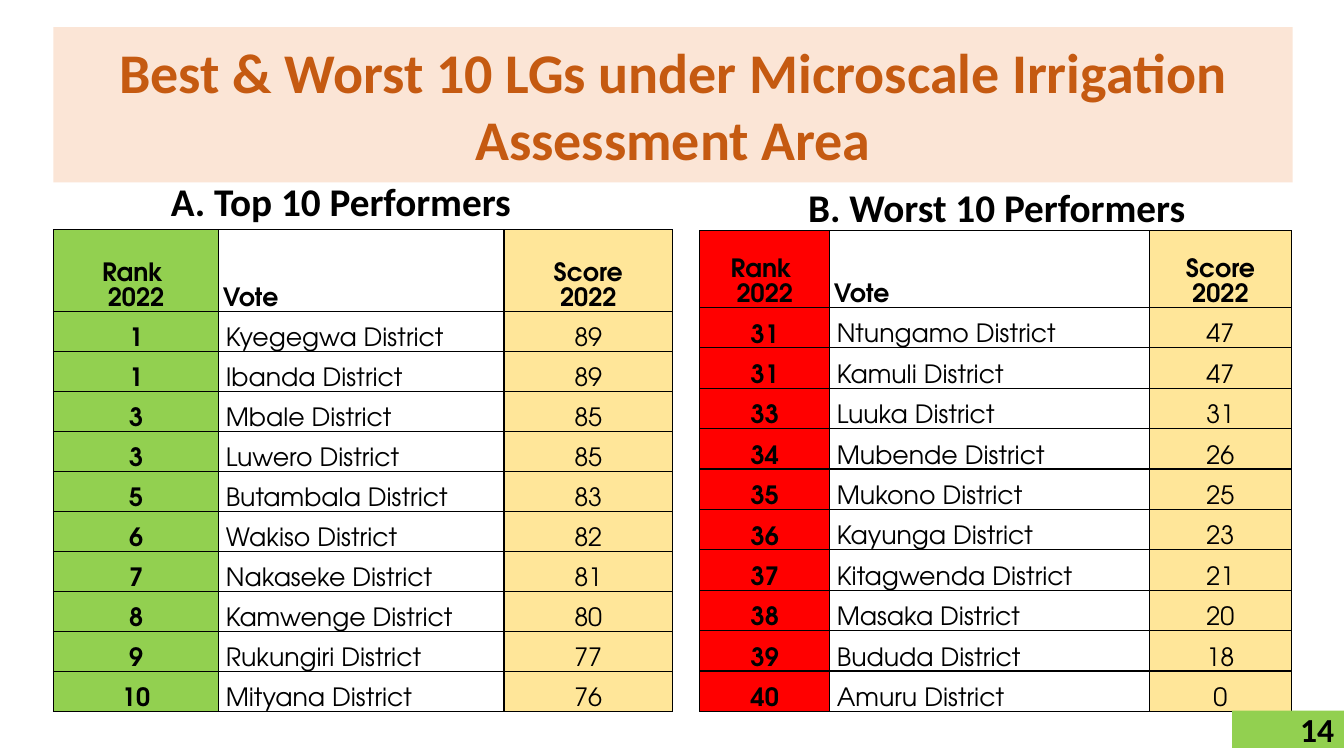
import pptx
import pptx.util
import pptx.oxml
import pptx.oxml.ns
import pptx.dml.color
import pptx.enum.text
import pptx.enum.shapes

PX = 9144  # 100 px to the inch
HUES = {
    "peach": "FBE5D6", "rust": "C55A11", "black": "000000", "white": "FFFFFF",
    "green": "92D050", "red": "FF0000", "gold": "FFE699",
}
ALIGN = pptx.enum.text.PP_ALIGN
ANCHOR = pptx.enum.text.MSO_ANCHOR

BEST = [
    (1, "Kyegegwa", 89), (1, "Ibanda", 89), (3, "Mbale", 85), (3, "Luwero", 85),
    (5, "Butambala", 83), (6, "Wakiso", 82), (7, "Nakaseke", 81),
    (8, "Kamwenge", 80), (9, "Rukungiri", 77), (10, "Mityana", 76),
]
WORST = [
    (31, "Ntungamo", 47), (31, "Kamuli", 47), (33, "Luuka", 31),
    (34, "Mubende", 26), (35, "Mukono", 25), (36, "Kayunga", 23),
    (37, "Kitagwenda", 21), (38, "Masaka", 20), (39, "Bududa", 18),
    (40, "Amuru", 0),
]


def px(num):
    return pptx.util.Emu(round(num * PX))


def hue(name):
    return pptx.dml.color.RGBColor.from_string(HUES[name])


def assign(item, values):
    for name, value in values.items():
        setattr(item, name, value)


def paint(item, name):
    item.fill.solid()
    item.fill.fore_color.rgb = hue(name)


def place(shape, box):
    assign(shape, dict(zip(("left", "top", "width", "height"), map(px, box))))


def write(frame, text, size, face="Calibri", color="black", bold=True, **para):
    frame.text = text
    for line in frame.paragraphs:
        assign(line, para)
        for run in line.runs:
            assign(run.font, {"size": pptx.util.Pt(size), "name": face, "bold": bold})
            run.font.color.rgb = hue(color)


def set_frame(frame, anchor):
    assign(frame, {"auto_size": pptx.enum.text.MSO_AUTO_SIZE.NONE,
                   "word_wrap": True, "vertical_anchor": anchor})


def border(cell):
    props = cell._tc.get_or_add_tcPr()
    for spot, side in enumerate(("lnL", "lnR", "lnT", "lnB")):
        props.insert(spot, pptx.oxml.parse_xml(
            f'<a:{side} {pptx.oxml.ns.nsdecls("a")} w="12700"><a:solidFill>'
            f'<a:srgbClr val="{HUES["black"]}"/></a:solidFill></a:{side}>'))


# Title band
def add_title(slide, box):
    title = slide.shapes.title
    place(title, box)
    paint(title, "peach")
    set_frame(title.text_frame, ANCHOR.MIDDLE)
    write(title.text_frame,
          "Best & Worst 10 LGs under Microscale Irrigation Assessment Area",
          40, color="rust", alignment=ALIGN.CENTER)


# Heading above a table
def add_head(shape, box, text):
    place(shape, box)
    set_frame(shape.text_frame, ANCHOR.BOTTOM)
    write(shape.text_frame, text, 28, alignment=ALIGN.CENTER,
          line_spacing=0.9, space_before=pptx.util.Pt(10))


# Ranking table
def add_ranks(slide, box, widths, top, data, color):
    rows = [("Rank \n2022", "Vote", "Score\n2022")]
    rows += [(str(rank), f"{vote} District", str(score)) for rank, vote, score in data]
    table = slide.shapes.add_table(len(rows), len(widths), *map(px, box)).table
    assign(table, {"first_row": False, "horz_banding": False})
    for col, width in zip(table.columns, widths):
        col.width = px(width)
    step = (box[3] - top) / len(data)
    fills = (color, "white", "gold")
    for r, row in enumerate(rows):
        table.rows[r].height = px(step if r else top)
        side = px(7 if r else 4)
        for c, text in enumerate(row):
            cell = table.cell(r, c)
            assign(cell, {"margin_left": side, "margin_right": side, "margin_top": 0,
                          "margin_bottom": 0, "vertical_anchor": ANCHOR.BOTTOM})
            paint(cell, fills[c])
            border(cell)
            write(cell.text_frame, text, 18, "TeX Gyre Adventor",
                  bold=r == 0 or c == 0, line_spacing=1.07,
                  alignment=ALIGN.LEFT if c == 1 else ALIGN.CENTER)


# Page number tab
def add_page(slide, box, text):
    tab = slide.shapes.add_shape(pptx.enum.shapes.MSO_SHAPE.RECTANGLE, *map(px, box))
    tab.shadow.inherit = False
    paint(tab, "green")
    tab.line.fill.background()
    set_frame(tab.text_frame, ANCHOR.MIDDLE)
    write(tab.text_frame, text, 24, alignment=ALIGN.RIGHT)


def main():
    deck = pptx.Presentation()
    assign(deck, {"slide_width": px(1333), "slide_height": px(750)})
    slide = deck.slides.add_slide(deck.slide_layouts.get_by_name("Comparison"))
    parts = {part.placeholder_format.idx: part for part in slide.placeholders}

    add_title(slide, (53, 27, 1229, 154))
    add_head(parts[1], (66, 171, 553, 57), "A. Top 10 Performers ")
    add_head(parts[3], (712, 178, 553, 56), "B. Worst 10 Performers")
    for idx in (2, 4):
        parts[idx].element.getparent().remove(parts[idx].element)

    add_ranks(slide, (53, 228, 614, 478), (164, 283, 167), 81, BEST, "green")
    add_ranks(slide, (694, 229, 587, 477), (129, 317, 141), 76, WORST, "red")
    add_page(slide, (1222, 705, 111, 37), "14")
    deck.save("out.pptx")


if __name__ == "__main__":
    main()
